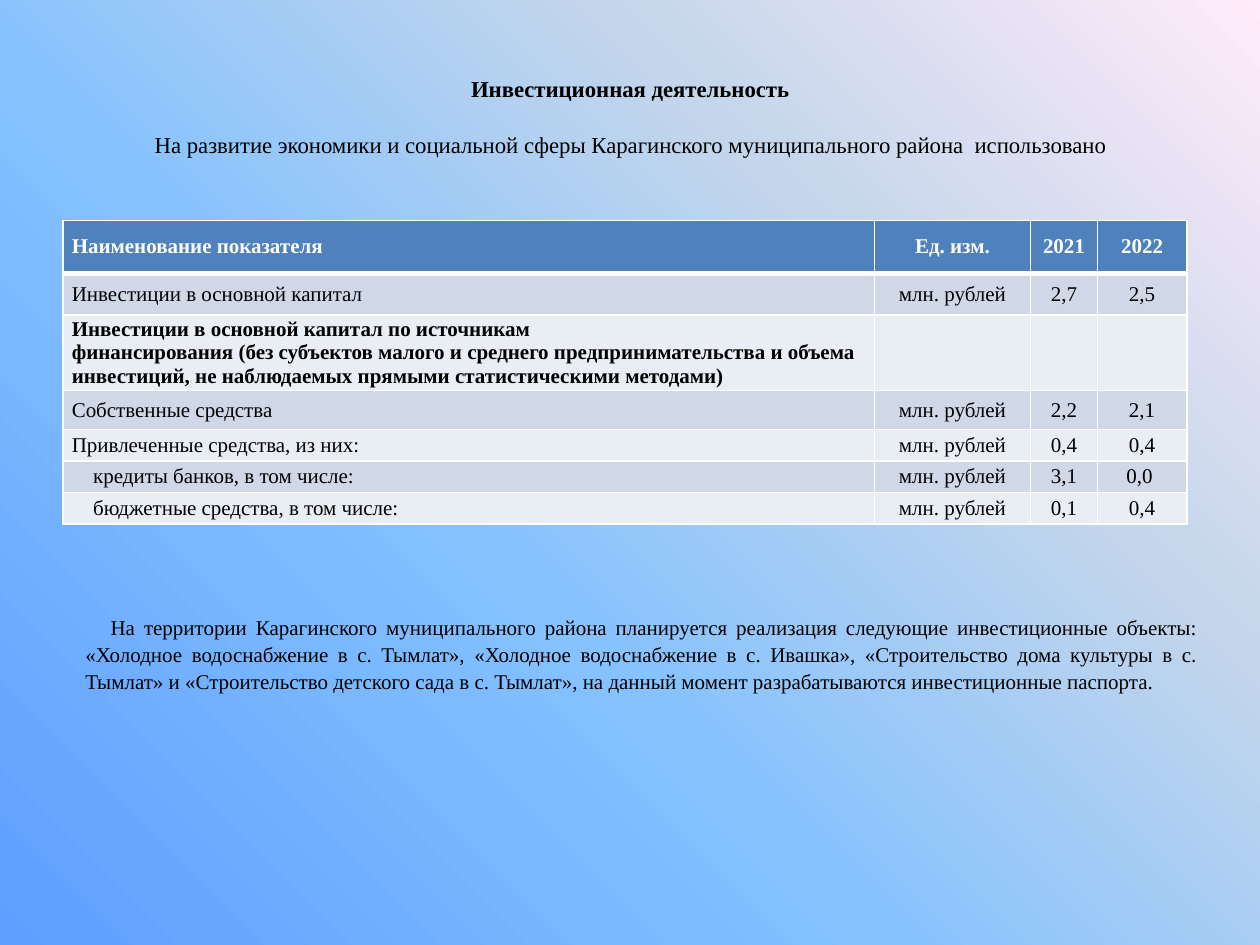
import pptx
import pptx.util
import pptx.dml.color
import pptx.enum.text
import pptx.oxml
import pptx.oxml.ns

COLORS = {
    "black": "000000", "white": "FFFFFF",
    "header": "4F81BD", "odd": "D0D8E8", "even": "E9EDF4",
}
GRADIENT = [(0, "5E9EFF"), (40, "85C2FF"), (70, "C4D6EB"), (100, "FFEBFA")]
FONT = "Times New Roman"
HEADING = "Инвестиционная деятельность"
SUBHEADING = (
    "На развитие экономики и социальной сферы Карагинского "
    "муниципального района  использовано"
)
UNIT = "млн. рублей"
ROWS = [
    ("Наименование показателя", "Ед. изм.", "2021", "2022"),
    ("Инвестиции в основной капитал", UNIT, "2,7", "2,5"),
    ("Инвестиции в основной капитал по источникам\n"
     "финансирования (без субъектов малого и среднего предпринимательства "
     "и объема инвестиций, не наблюдаемых прямыми статистическими методами)",
     "", "", ""),
    ("Собственные средства", UNIT, "2,2", "2,1"),
    ("Привлеченные средства, из них:", UNIT, "0,4", "0,4"),
    ("кредиты банков, в том числе:", UNIT, "3,1", "0,0 "),
    ("бюджетные средства, в том числе:", UNIT, "0,1", "0,4"),
]
BOLD_ROWS = {0, 2}
INDENTED_ROWS = {5, 6}
COLUMN_WIDTHS = [6.44, 1.24, 0.53, 0.71]
ROW_HEIGHTS = [0.42, 0.33, 0.59, 0.31, 0.25, 0.25, 0.25]
PROJECTS = (
    "На территории Карагинского муниципального района планируется реализация "
    "следующие инвестиционные объекты: «Холодное водоснабжение в с. Тымлат», "
    "«Холодное водоснабжение в с. Ивашка», «Строительство дома культуры в "
    "с. Тымлат» и «Строительство детского сада в с. Тымлат», на данный момент "
    "разрабатываются инвестиционные паспорта."
)

inches = pptx.util.Inches
points = pptx.util.Pt
ALIGN = pptx.enum.text.PP_ALIGN
MIDDLE = pptx.enum.text.MSO_ANCHOR.MIDDLE


def write(para, text, size=12, bold=False, color="black", align=ALIGN.LEFT,
          indent=0, spacing=1.0, after=0):
    para.text = text
    para.alignment = align
    para.line_spacing = spacing
    para.space_after = points(after)
    if indent:
        para._p.get_or_add_pPr().set("indent", str(inches(indent)))
    for font in [para.font] + [span.font for span in para.runs]:
        font.name = FONT
        font.size = points(size)
        font.bold = bold
        font.color.rgb = pptx.dml.color.RGBColor.from_string(COLORS[color])


def add_box(page, left, top, width, height):
    box = page.shapes.add_textbox(*map(inches, (left, top, width, height)))
    box.text_frame.word_wrap = True
    box.text_frame.vertical_anchor = MIDDLE
    return box.text_frame


def xml(tag, content):
    space = pptx.oxml.ns.nsdecls("a")
    return pptx.oxml.parse_xml(f"<a:{tag} {space}>{content}</a:{tag.split()[0]}>")


def paint_background(page):
    fill = page.background.fill
    fill.gradient()
    fill.gradient_angle = 45
    stops = page.background._cSld.find(".//" + pptx.oxml.ns.qn("a:gsLst"))
    for stop in list(stops):
        stops.remove(stop)
    for share, color in GRADIENT:
        stops.append(xml(f'gs pos="{share * 1000}"', f'<a:srgbClr val="{color}"/>'))


def set_borders(cell, row):
    line = f'<a:solidFill><a:srgbClr val="{COLORS["white"]}"/></a:solidFill>'
    for index, side in enumerate("LRTB"):
        heavy = (row == 0 and side == "B") or (row == 1 and side == "T")
        width = points(3 if heavy else 1)
        cell._tc.get_or_add_tcPr().insert(index, xml(f'ln{side} w="{width}"', line))


def add_indicators(page):
    size = (sum(COLUMN_WIDTHS), sum(ROW_HEIGHTS))
    frame = page.shapes.add_table(
        len(ROWS), len(COLUMN_WIDTHS), *map(inches, (0.5, 1.75, *size)))
    table = frame.table
    for column, width in zip(table.columns, COLUMN_WIDTHS):
        column.width = inches(width)
    for row, (texts, height) in enumerate(zip(ROWS, ROW_HEIGHTS)):
        table.rows[row].height = inches(height)
        shade = "header" if row == 0 else "odd" if row % 2 else "even"
        for column, text in enumerate(texts):
            cell = table.cell(row, column)
            cell.vertical_anchor = MIDDLE
            cell.margin_left = cell.margin_right = inches(0.07)
            cell.margin_top = cell.margin_bottom = 0
            cell.fill.solid()
            cell.fill.fore_color.rgb = pptx.dml.color.RGBColor.from_string(COLORS[shade])
            set_borders(cell, row)
            write(cell.text_frame.paragraphs[0], text,
                  bold=row in BOLD_ROWS,
                  color="white" if row == 0 else "black",
                  align=ALIGN.CENTER if column else ALIGN.LEFT,
                  indent=0.17 if row in INDENTED_ROWS and not column else 0)


def main():
    deck = pptx.Presentation()
    deck.slide_width, deck.slide_height = inches(10), inches(7.5)
    page = deck.slides.add_slide(deck.slide_layouts[6])
    paint_background(page)

    title = add_box(page, 0.5, 0.3, 9, 1.25)
    write(title.paragraphs[0], HEADING, size=13, bold=True,
          align=ALIGN.CENTER, after=16.5)
    write(title.add_paragraph(), SUBHEADING, size=13, align=ALIGN.CENTER)

    add_indicators(page)

    projects = add_box(page, 0.58, 4.83, 9.03, 0.71)
    write(projects.paragraphs[0], PROJECTS, align=ALIGN.JUSTIFY,
          indent=0.2, spacing=1.07)
    deck.save("out.pptx")


if __name__ == "__main__":
    main()
